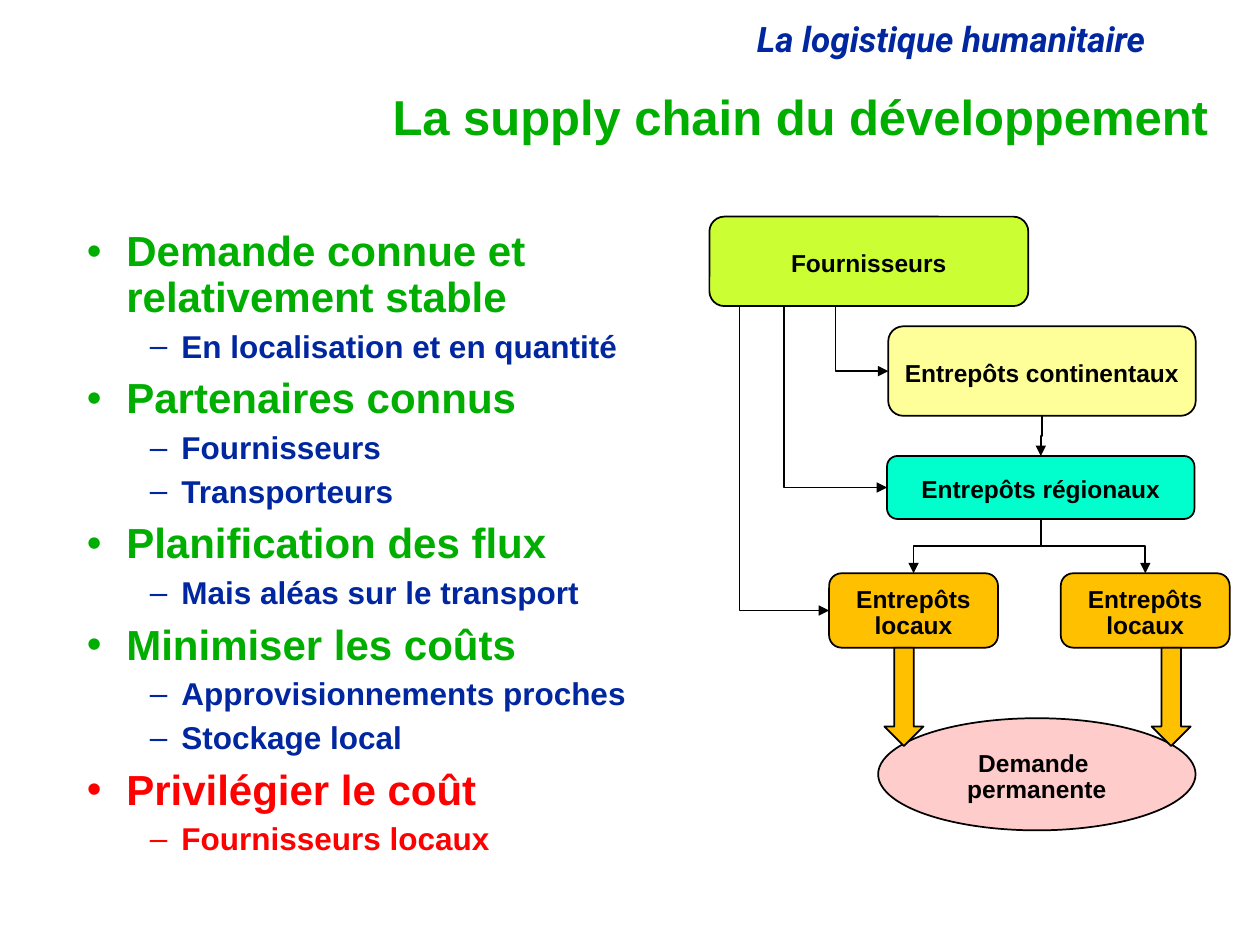
from collections import namedtuple
from lxml import etree
from pptx import Presentation
from pptx.dml.color import RGBColor
from pptx.enum.shapes import MSO_CONNECTOR, MSO_SHAPE
from pptx.enum.text import MSO_ANCHOR, MSO_AUTO_SIZE, PP_ALIGN
from pptx.oxml.ns import qn
from pptx.util import Pt

ELBOW = MSO_CONNECTOR.ELBOW
ROUNDED, ELLIPSE, ARROW = MSO_SHAPE.ROUNDED_RECTANGLE, MSO_SHAPE.OVAL, MSO_SHAPE.DOWN_ARROW
MIDDLE, TOP = MSO_ANCHOR.MIDDLE, MSO_ANCHOR.TOP
LEFT, CENTER, RIGHT = PP_ALIGN.LEFT, PP_ALIGN.CENTER, PP_ALIGN.RIGHT
FIXED = MSO_AUTO_SIZE.NONE

COLORS = {
    "green": "00AE00", "blue": "00279F", "red": "FF0000", "black": "000000",
    "lime": "CCFF33", "yellow": "FFFF99", "aqua": "00FFCC",
    "orange": "FFC000", "pink": "FFCCCC",
}
LEVELS = [
    {"size": 24, "margin": 22.5, "hanging": 22.5, "bullet": "•"},
    {"size": 18, "margin": 54, "hanging": 18, "bullet": "–"},
]
TOPICS = [
    ("Demande connue et relativement stable", ["En localisation et en quantité"], "green", "blue"),
    ("Partenaires connus", ["Fournisseurs", "Transporteurs"], "green", "blue"),
    ("Planification des flux", ["Mais aléas sur le transport"], "green", "blue"),
    ("Minimiser les coûts", ["Approvisionnements proches", "Stockage local"], "green", "blue"),
    ("Privilégier le coût", ["Fournisseurs locaux"], "red", "red"),
]
Box = namedtuple("Box", "left top width height")


def rgb(name):
    return RGBColor.from_string(COLORS[name])


def place(shape, box):
    shape.left, shape.top, shape.width, shape.height = (Pt(value) for value in box)


def format_paragraph(paragraph, size, color, align=LEFT, font_name="Arial", italic=False):
    paragraph.alignment = align
    paragraph.line_spacing = 0.9
    for run in paragraph.runs:
        font = run.font
        font.name, font.size, font.bold, font.italic = font_name, Pt(size), True, italic
        font.color.rgb = rgb(color)


def add_header(slide, box):
    header = slide.shapes.add_textbox(*(Pt(value) for value in box))
    frame = header.text_frame
    frame.word_wrap = True
    frame.text = "La logistique humanitaire"
    format_paragraph(frame.paragraphs[0], 20, "blue", font_name="Roboto", italic=True)


def fill_title(slide, box):
    title = slide.shapes.title
    place(title, box)
    frame = title.text_frame
    frame.auto_size, frame.vertical_anchor = FIXED, MIDDLE
    frame.text = "La supply chain du développement"
    format_paragraph(frame.paragraphs[0], 28, "green", RIGHT)


def format_bullet(paragraph, level, color):
    style = LEVELS[level]
    paragraph.level = level
    format_paragraph(paragraph, style["size"], color)
    properties = paragraph._p.get_or_add_pPr()
    properties.set("marL", str(Pt(style["margin"])))
    properties.set("indent", str(-Pt(style["hanging"])))
    spacing = etree.SubElement(properties, qn("a:spcBef"))
    etree.SubElement(spacing, qn("a:spcPct")).set("val", "30000")
    etree.SubElement(properties, qn("a:buFont")).set("typeface", "Arial")
    etree.SubElement(properties, qn("a:buChar")).set("char", style["bullet"])


def fill_topics(slide, box):
    body = slide.placeholders[1]
    place(body, box)
    frame = body.text_frame
    frame.auto_size, frame.vertical_anchor = FIXED, TOP
    lines = []
    for topic, details, topic_color, detail_color in TOPICS:
        lines.append((topic, 0, topic_color))
        lines += [(detail, 1, detail_color) for detail in details]
    frame.text = "\n".join(text for text, _, _ in lines)
    for paragraph, (_, level, color) in zip(frame.paragraphs, lines):
        format_bullet(paragraph, level, color)


def add_node(slide, kind, box, fill, text="", wrap=False):
    node = slide.shapes.add_shape(kind, *(Pt(value) for value in box))
    node.shadow.inherit = False
    node.fill.solid()
    node.fill.fore_color.rgb = rgb(fill)
    node.line.color.rgb = rgb("black")
    node.line.width = Pt(1)
    if text:
        frame = node.text_frame
        frame.word_wrap, frame.vertical_anchor = wrap, MIDDLE
        frame.margin_bottom = 0
        frame.text = text
        format_paragraph(frame.paragraphs[0], 14, "black", CENTER)


def add_link(slide, start, end, preset):
    run, drop = end[0] - start[0], end[1] - start[1]
    left = (start[0] + end[0] - drop) / 2
    top = (start[1] + end[1] - abs(run)) / 2
    link = slide.shapes.add_connector(
        ELBOW, Pt(left), Pt(top), Pt(left + drop), Pt(top + abs(run)))
    link.line.color.rgb = rgb("black")
    link.line.width = Pt(1)
    properties = link.element.spPr
    transform = properties.find(qn("a:xfrm"))
    transform.set("rot", str((270 if run > 0 else 90) * 60000))
    if run > 0:
        transform.set("flipH", "1")
    properties.find(qn("a:prstGeom")).set("prst", preset)
    etree.SubElement(properties.find(qn("a:ln")), qn("a:tailEnd")).set("type", "triangle")
    etree.SubElement(properties, qn("a:effectLst"))


def top_center(box):
    return box.left + box.width / 2, box.top


def bottom_center(box):
    return box.left + box.width / 2, box.top + box.height


def left_middle(box):
    return box.left, box.top + box.height / 2


def add_supply_chain(slide, area):
    def inside(left, top, width, height):
        return Box(area.left + left, area.top + top, width, height)

    suppliers = inside(0, 0, 182.2, 51.1)
    continental = inside(102.2, 62.7, 175.7, 51.1)
    regional = inside(101.5, 136.8, 175.7, 36)
    locals_ = [inside(left, 203.8, 96.5, 42.5) for left in (68.4, 200.8)]
    demand = inside(96.4, 286.6, 181.4, 64.1)
    deliveries = [inside(left, 246.3, 22.3, 56.2) for left in (100, 252.7)]

    add_node(slide, ROUNDED, regional, "aqua", "Entrepôts régionaux")
    add_node(slide, ELLIPSE, demand, "pink", "Demande \vpermanente")
    add_node(slide, ROUNDED, continental, "yellow", "Entrepôts continentaux")
    add_node(slide, ROUNDED, suppliers, "lime", "Fournisseurs")
    for warehouse, delivery in zip(locals_, deliveries):
        add_node(slide, ROUNDED, warehouse, "orange", "Entrepôts locaux", wrap=True)
        add_node(slide, ARROW, delivery, "orange")

    supplied = [(17.2, locals_[0]), (42.4, regional), (72, continental)]
    for offset, warehouse in supplied:
        start = suppliers.left + offset, suppliers.top + suppliers.height
        add_link(slide, start, left_middle(warehouse), "bentConnector2")
    for source, target in [(regional, locals_[0]), (regional, locals_[1]), (continental, regional)]:
        add_link(slide, bottom_center(source), top_center(target), "bentConnector3")


def main():
    presentation = Presentation()
    presentation.slide_width, presentation.slide_height = Pt(720), Pt(540)
    slide = presentation.slides.add_slide(presentation.slide_layouts[1])
    add_header(slide, Box(425.5, 9.4, 292.3, 28.8))
    fill_title(slide, Box(127.4, 50.4, 570.2, 36))
    fill_topics(slide, Box(42.5, 128.2, 408.2, 324))
    add_supply_chain(slide, Box(405.4, 123.8, 297.3, 350.7))
    presentation.save("out.pptx")


if __name__ == "__main__":
    main()
